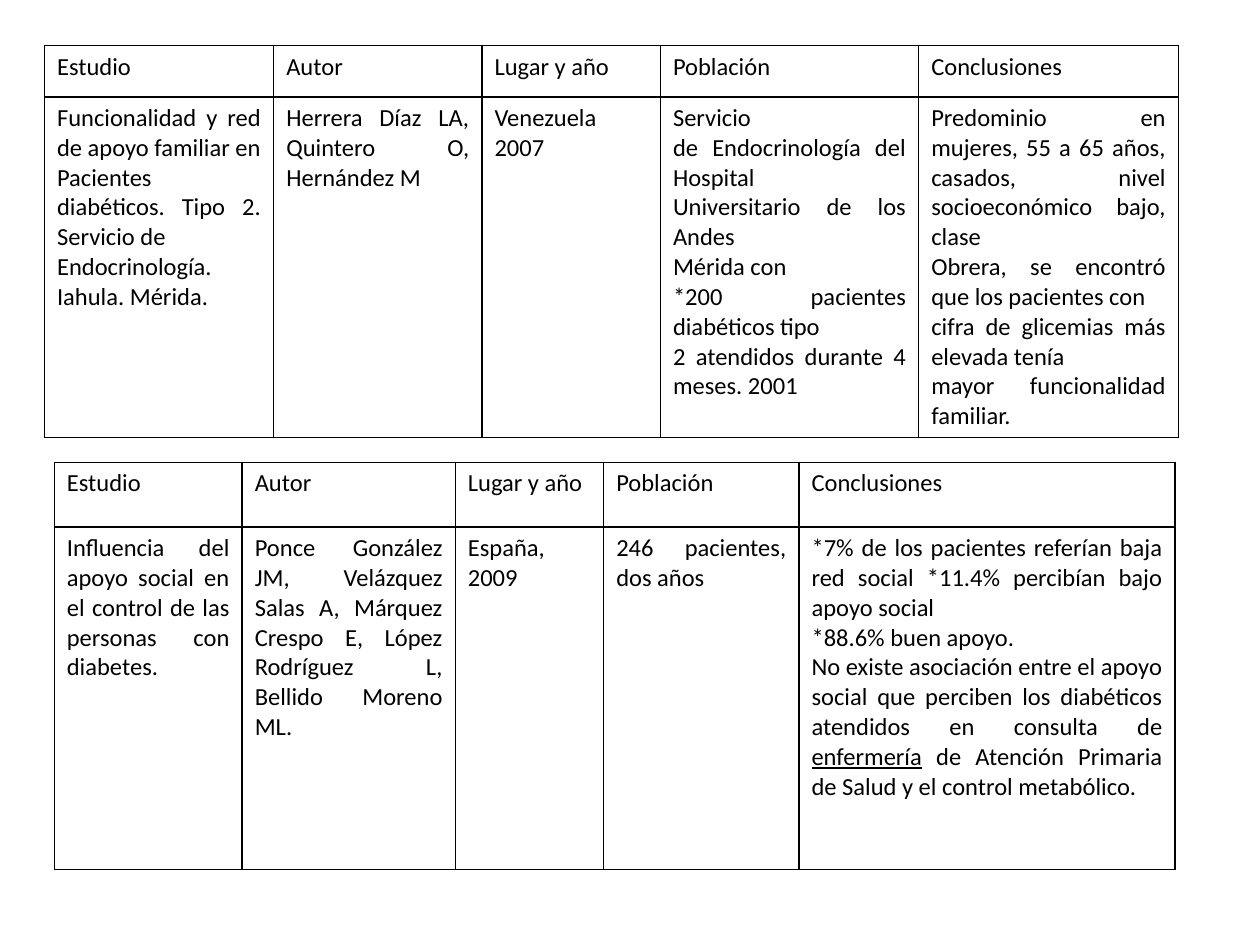
from lxml import etree
from pptx import Presentation
from pptx.dml.color import RGBColor
from pptx.enum import text
from pptx.oxml import ns
from pptx.util import Pt

FONT, SIZE, INK = "Calibri", 14, "000000"
HEADERS = ["Estudio", "Autor", "Lugar y año", "Población", "Conclusiones"]

# Each cell is a list of paragraphs; a paragraph is a string or a list of (words, underlined).
VENEZUELA_STUDY = [
    ["Funcionalidad y red de apoyo familiar en",
     "Pacientes diabéticos. Tipo 2. Servicio de",
     "Endocrinología. Iahula. Mérida."],
    ["Herrera Díaz LA, Quintero O, Hernández M"],
    ["Venezuela", "2007"],
    ["Servicio",
     "de Endocrinología del Hospital",
     "Universitario de los Andes",
     "Mérida con",
     "*200 pacientes diabéticos tipo",
     "2 atendidos durante 4 meses. 2001"],
    ["Predominio en mujeres, 55 a 65 años, casados, nivel socioeconómico bajo, clase",
     "Obrera, se encontró que los pacientes con",
     "cifra de glicemias más elevada tenía",
     "mayor funcionalidad familiar."],
]
SPAIN_STUDY = [
    ["Influencia del apoyo social en el control de las personas con diabetes."],
    ["Ponce González JM, Velázquez Salas A, Márquez Crespo E, López Rodríguez L, "
     "Bellido Moreno ML."],
    ["España, 2009"],
    ["246 pacientes, dos años"],
    ["*7% de los pacientes referían baja red social *11.4% percibían bajo apoyo social",
     "*88.6% buen apoyo.",
     [("No existe asociación entre el apoyo social que perciben los diabéticos "
       "atendidos en consulta de ", False),
      ("enfermería", True),
      (" de Atención Primaria de Salud y el control metabólico.", False)]],
]


def color(value):
    return RGBColor.from_string(value)


def add_borders(cell, width=1):
    properties = cell._tc.get_or_add_tcPr()
    for side in ("lnL", "lnR", "lnT", "lnB"):
        line = etree.SubElement(properties, ns.qn(f"a:{side}"), w=str(Pt(width)))
        fill = etree.SubElement(line, ns.qn("a:solidFill"))
        etree.SubElement(fill, ns.qn("a:srgbClr"), val=INK)


def add_span(para, words, underlined):
    span = para.add_run()
    span.text = words
    font = span.font
    font.name, font.size, font.bold = FONT, Pt(SIZE), False
    font.color.rgb = color(INK)
    if underlined:
        font.underline = True


def fill_cell(cell, paragraphs, align):
    add_borders(cell)
    cell.fill.background()
    frame = cell.text_frame
    for index, content in enumerate(paragraphs):
        para = frame.add_paragraph() if index else frame.paragraphs[0]
        para.alignment = align
        spans = [(content, False)] if isinstance(content, str) else content
        for words, underlined in spans:
            add_span(para, words, underlined)


def add_study(page, left, top, widths, heights, study):
    """Add a table with the shared header row and one study below it."""
    frame = page.shapes.add_table(2, len(widths), Pt(left), Pt(top),
                                  Pt(sum(widths)), Pt(sum(heights)))
    table = frame.table
    table.first_row = table.horz_banding = False
    for column, width in zip(table.columns, widths):
        column.width = Pt(width)
    for row, height in zip(table.rows, heights):
        row.height = Pt(height)
    for index, (header, body) in enumerate(zip(HEADERS, study)):
        fill_cell(table.cell(0, index), [header], text.PP_ALIGN.LEFT)
        fill_cell(table.cell(1, index), body, text.PP_ALIGN.JUSTIFY)


def main():
    deck = Presentation()
    deck.slide_width, deck.slide_height = Pt(720), Pt(540)
    page = deck.slides.add_slide(deck.slide_layouts[6])
    add_study(page, 25.4, 26, [131, 119, 102, 147.6, 148.4], [29.4, 194.2], VENEZUELA_STUDY)
    add_study(page, 31, 264.2, [107.4, 121.8, 84.8, 111.6, 215], [37, 195.6], SPAIN_STUDY)
    deck.save("out.pptx")


if __name__ == "__main__":
    main()
